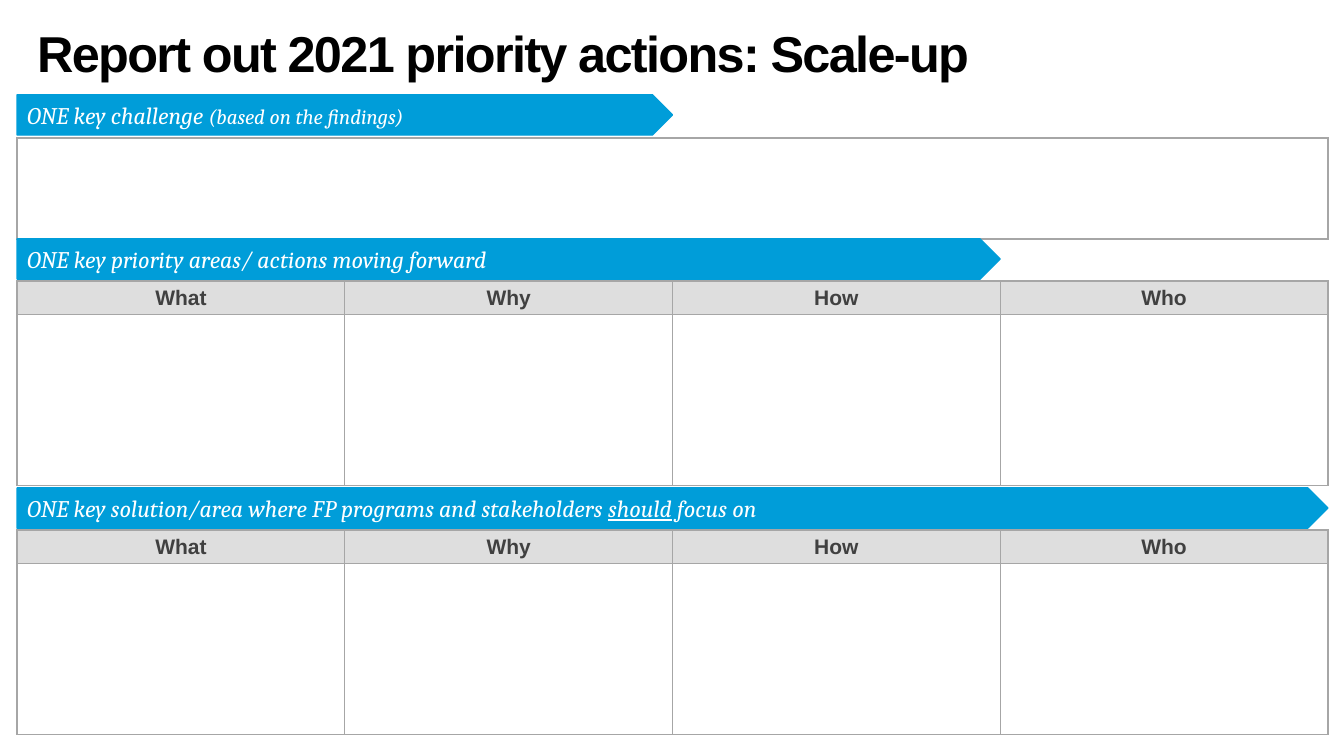
from lxml import etree
from pptx import Presentation
from pptx import util as u
from pptx.dml.color import RGBColor
from pptx.enum import shapes, text
from pptx.oxml.ns import qn

BLUE, GREY, HEAD, DARK = "009DD9", "A6A6A6", "DEDEDE", "404040"
LEFT, COL, BAR = 0.17, 3.25, 0.4
THIN, THICK = 0.75, 1.5


def rgb(h):
    return RGBColor.from_string(h)


def borders(cell, widths):
    tc = cell._tc.get_or_add_tcPr()
    for i, (side, w) in enumerate(zip("LRTB", widths)):
        ln = etree.Element(qn(f"a:ln{side}"), w=str(u.Pt(w)))
        fill = etree.SubElement(ln, qn("a:solidFill"))
        etree.SubElement(fill, qn("a:srgbClr"), val=GREY)
        tc.insert(i, ln)


prs = Presentation()
prs.slide_width, prs.slide_height = u.Inches(13.33), u.Inches(7.5)
s = prs.slides.add_slide(prs.slide_layouts[6])

sp = s.shapes.add_textbox(u.Inches(0.27), u.Inches(0.23), u.Inches(12.8), u.Inches(0.65))
tf = sp.text_frame
tf.word_wrap = True
tf.vertical_anchor = text.MSO_ANCHOR.MIDDLE
p = tf.paragraphs[0]
p.line_spacing = 0.9
r = p.add_run()
r.text = "Report out 2021 priority actions: Scale-up"
p.font.name, p.font.size, p.font.bold = "Arial", u.Pt(36), True
p.font.color.rgb = rgb("000000")
r._r.get_or_add_rPr().set("spc", "-120")

titles = ["What", "Why", "How", "Who"]
tables = [
    (1.37, [""], [1]),
    (2.79, titles, [0.33, 1.7]),
    (5.26, titles, [0.33, 1.7]),
]
for top, heads, heights in tables:
    n, last = len(heads), len(heights) - 1
    tb = s.shapes.add_table(len(heights), n, u.Inches(LEFT), u.Inches(top),
                            u.Inches(4 * COL), u.Inches(sum(heights))).table
    tb.first_row = tb.horz_banding = False
    for col in tb.columns:
        col.width = u.Inches(4 * COL / n)
    for i, height in enumerate(heights):
        tb.rows[i].height = u.Inches(height)
        for j, head in enumerate(heads):
            c = tb.cell(i, j)
            c.fill.background()
            if i < last:
                c.fill.solid()
                c.fill.fore_color.rgb = rgb(HEAD)
                c.margin_top = c.margin_bottom = u.Inches(0.03)
                c.vertical_anchor = text.MSO_ANCHOR.MIDDLE
                p = c.text_frame.paragraphs[0]
                p.text, p.alignment = head, text.PP_ALIGN.CENTER
                p.font.name, p.font.size, p.font.bold = "Arial", u.Pt(15), True
                p.font.color.rgb = rgb(DARK)
            borders(c, [THICK if j == 0 else THIN,
                        THICK if j == n - 1 else THIN,
                        THICK,
                        THIN if i == last and n > 1 else THICK])

bars = [
    (0.94, 2, [("ONE key challenge ", 17, False), ("(based on the findings)", 15, False)]),
    (2.37, 3, [("ONE key priority areas/ actions moving forward", 17, False)]),
    (4.84, 4, [("ONE key solution/area where FP programs and stakeholders ", 17, False),
               ("should", 17, True), (" focus on", 17, False)]),
]
for top, cols, runs in bars:
    sp = s.shapes.add_shape(shapes.MSO_SHAPE.PENTAGON, u.Inches(LEFT), u.Inches(top),
                            u.Inches(cols * COL), u.Inches(BAR))
    sp.shadow.inherit = False
    sp.fill.solid()
    sp.fill.fore_color.rgb = sp.line.color.rgb = rgb(BLUE)
    sp.line.width = u.Pt(1)
    tf = sp.text_frame
    tf.word_wrap = True
    tf.vertical_anchor = text.MSO_ANCHOR.MIDDLE
    p = tf.paragraphs[0]
    p.alignment = text.PP_ALIGN.LEFT
    p.font.name, p.font.italic = "Cambria", True
    p.font.color.rgb = rgb("FFFFFF")
    for words, size, under in runs:
        r = p.add_run()
        r.text = words
        r.font.name, r.font.italic = "Cambria", True
        r.font.size, r.font.underline = u.Pt(size), under
        r.font.color.rgb = rgb("FFFFFF")

prs.save("out.pptx")
